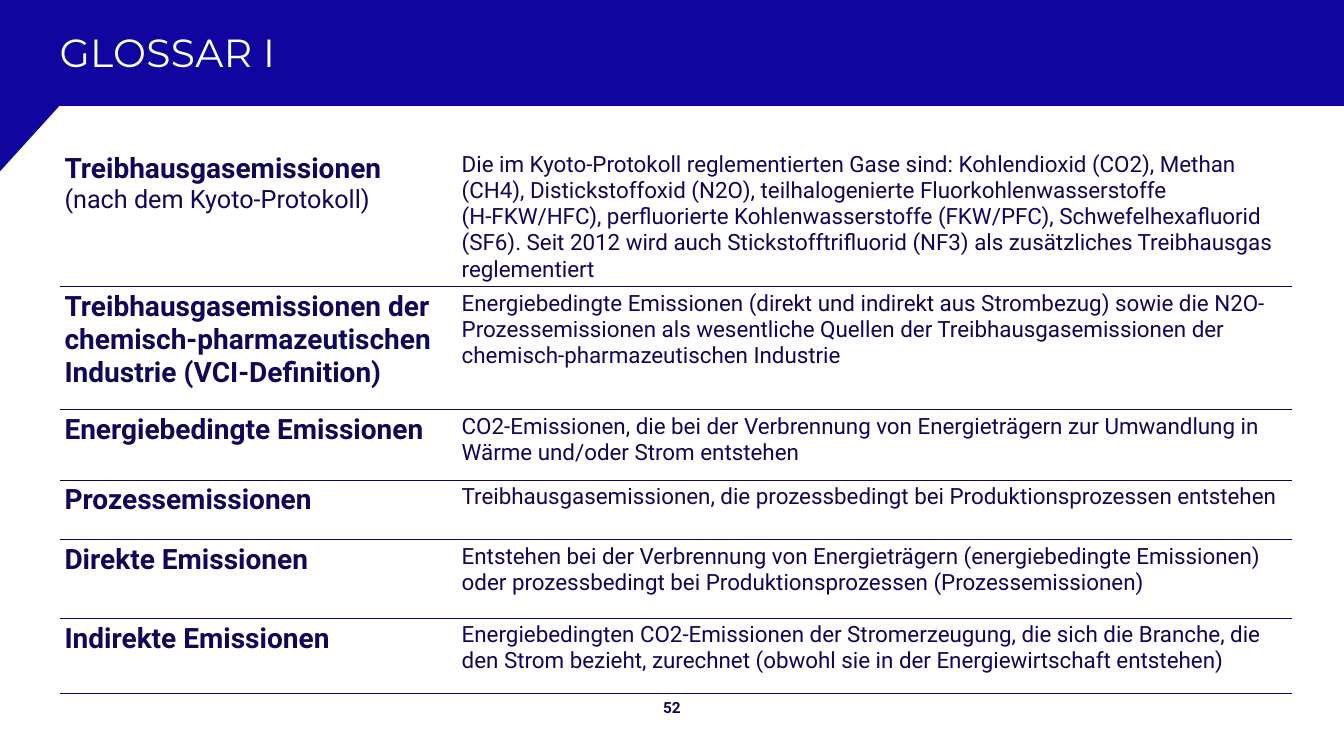
from lxml import etree
from pptx import Presentation
from pptx import util as u
from pptx.dml.color import RGBColor
from pptx.enum import text as t
from pptx.oxml import parse_xml
from pptx.oxml.ns import nsdecls, qn

COLORS = {"banner": "10069F", "ink": "10065A", "title": "FFFFFF"}
NO_GRID_STYLE = "{2D5ABB26-0587-4C30-8999-92F81FD0307C}"
BANNER = [(0, -0.01), (13.33, -0.01), (13.33, 1.05), (0.59, 1.05), (0, 1.7)]
COLUMNS = [3.94, 8.27]

# Row height, paragraphs of the term, definition
GLOSSARY = [
    (1.29, ["Treibhausgasemissionen", "(nach dem Kyoto-Protokoll)"],
     "Die im Kyoto-Protokoll reglementierten Gase sind: Kohlendioxid (CO2), Methan (CH4), "
     "Distickstoffoxid (N2O), teilhalogenierte Fluorkohlenwasserstoffe (H-FKW/HFC), "
     "perfluorierte Kohlenwasserstoffe (FKW/PFC), Schwefelhexafluorid (SF6). Seit 2012 wird "
     "auch Stickstofftrifluorid (NF3) als zusätzliches Treibhausgas reglementiert"),
    (1.22, ["Treibhausgasemissionen der chemisch-pharmazeutischen Industrie (VCI-Definition)"],
     "Energiebedingte Emissionen (direkt und indirekt aus Strombezug) sowie die "
     "N2O-Prozessemissionen als wesentliche Quellen der Treibhausgasemissionen der "
     "chemisch-pharmazeutischen Industrie"),
    (0.7, ["Energiebedingte Emissionen"],
     "CO2-Emissionen, die bei der Verbrennung von Energieträgern zur Umwandlung in Wärme "
     "und/oder Strom entstehen"),
    (0.59, ["Prozessemissionen"],
     "Treibhausgasemissionen, die prozessbedingt bei Produktionsprozessen entstehen"),
    (0.78, ["Direkte Emissionen"],
     "Entstehen bei der Verbrennung von Energieträgern (energiebedingte Emissionen) oder "
     "prozessbedingt bei Produktionsprozessen (Prozessemissionen)"),
    (0.75, ["Indirekte Emissionen"],
     "Energiebedingten CO2-Emissionen der Stromerzeugung, die sich die Branche, die den Strom "
     "bezieht, zurechnet (obwohl sie in der Energiewirtschaft entstehen)"),
]


def write(para, words, size, font="Roboto", color="ink", bold=False, spacing=0, align=None):
    span = para.add_run()
    span.text = words
    span.font.size = u.Pt(size)
    span.font.name = font
    span.font.bold = bold
    span.font.color.rgb = RGBColor.from_string(COLORS[color])
    if spacing:
        span.font._element.set("spc", str(round(spacing * 100)))
    para.alignment = align


def rule_below(cell, width):
    """Draw the bottom border of a cell; borders must precede its fill."""
    line = parse_xml(
        f'<a:lnB {nsdecls("a")} w="{u.Pt(width)}"><a:solidFill>'
        f'<a:srgbClr val="{COLORS["ink"]}"/></a:solidFill></a:lnB>')
    cell._tc.get_or_add_tcPr().insert(0, line)


class GlossarySlide:
    def __init__(self, deck):
        self.page = deck.slides.add_slide(deck.slide_layouts[5])
        self.shapes = self.page.shapes

    def banner(self, points):
        builder = self.shapes.build_freeform(
            *[u.Inches(value) for value in points[0]], scale=1.0)
        builder.add_line_segments([(u.Inches(x), u.Inches(y)) for x, y in points[1:]])
        shape = builder.convert_to_shape()
        shape.shadow.inherit = False
        shape.fill.solid()
        shape.fill.fore_color.rgb = RGBColor.from_string(COLORS["banner"])
        shape.line.fill.background()

    def set_frame(self, box, margin_y):
        frame = box.text_frame
        frame.word_wrap = True
        frame.auto_size = t.MSO_AUTO_SIZE.NONE
        frame.vertical_anchor = t.MSO_ANCHOR.MIDDLE
        frame.margin_left = frame.margin_right = 0
        frame.margin_top = frame.margin_bottom = u.Inches(margin_y)
        return frame.paragraphs[0]

    def title(self, words, left, top, width, height):
        box = self.shapes.title
        box.left, box.top = u.Inches(left), u.Inches(top)
        box.width, box.height = u.Inches(width), u.Inches(height)
        box.element.getparent().append(box.element)  # in front of the banner
        write(self.set_frame(box, 0.04), words, 28, font="Montserrat", color="title",
              spacing=0.3, align=t.PP_ALIGN.LEFT)

    def page_number(self, words, left, top, width, height):
        box = self.shapes.add_textbox(*map(u.Inches, (left, top, width, height)))
        write(self.set_frame(box, 0), words, 11, bold=True, align=t.PP_ALIGN.CENTER)

    def glossary(self, entries, left, top):
        height = sum(entry[0] for entry in entries)
        frame = self.shapes.add_table(
            len(entries), len(COLUMNS), *map(u.Inches, (left, top, sum(COLUMNS), height)))
        table = frame.table
        table.first_row = table.horz_banding = False
        table._tbl.tblPr.find(qn("a:tableStyleId")).text = NO_GRID_STYLE
        for column, width in zip(table.columns, COLUMNS):
            column.width = u.Inches(width)
        for row, (row_height, term, definition) in zip(table.rows, entries):
            row.height = u.Inches(row_height)
            term_cell, definition_cell = row.cells
            for cell in row.cells:
                cell.margin_left = cell.margin_right = u.Inches(0.04)
                cell.margin_top = cell.margin_bottom = u.Inches(0.04)
                cell.fill.background()
                rule_below(cell, 1.18 if term == entries[-1][1] else 0.59)
            heading = term_cell.text_frame
            write(heading.paragraphs[0], term[0], 20, bold=True)
            for note in term[1:]:
                write(heading.add_paragraph(), note, 18)
            write(definition_cell.text_frame.paragraphs[0], definition, 16)


def main():
    deck = Presentation()
    deck.slide_width, deck.slide_height = u.Inches(13.33), u.Inches(7.5)
    slide = GlossarySlide(deck)
    slide.banner(BANNER)
    slide.page_number("52", 6.37, 6.88, 0.59, 0.28)
    slide.glossary(GLOSSARY, 0.6, 1.47)
    slide.title("GLOSSAR I", 0.59, 0.02, 12.2, 0.98)
    deck.save("out.pptx")


if __name__ == "__main__":
    main()
